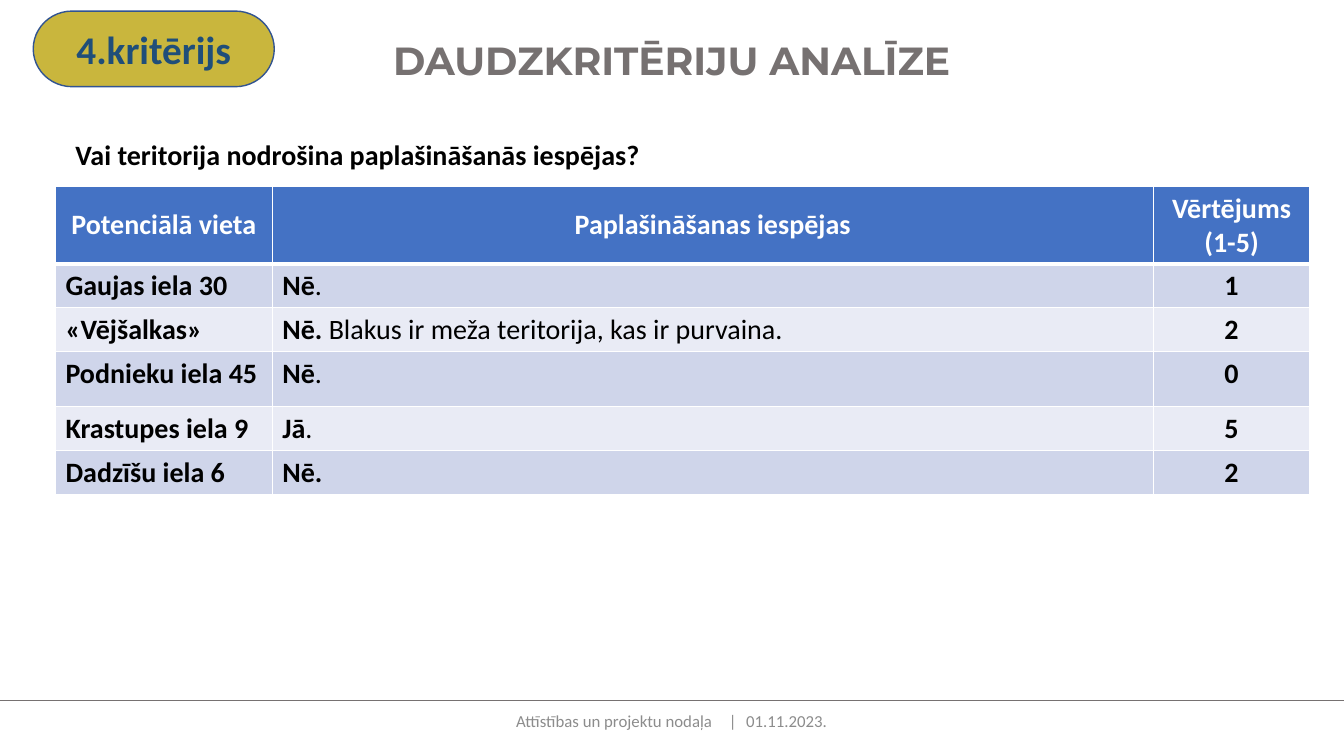
import pptx
import pptx.dml.color
import pptx.enum.shapes
import pptx.enum.text
import pptx.oxml
import pptx.oxml.ns
import pptx.util
from lxml import etree

Inches = pptx.util.Inches
Pt = pptx.util.Pt
RGBColor = pptx.dml.color.RGBColor
Align = pptx.enum.text.PP_ALIGN
Anchor = pptx.enum.text.MSO_ANCHOR
qn = pptx.oxml.ns.qn

TITLE = "DAUDZKRITĒRIJU ANALĪZE"
BADGE = "4.kritērijs"
QUESTION = "Vai teritorija nodrošina paplašināšanās iespējas?"
FOOTER = "Attīstības un projektu nodaļa\t|\t01.11.2023."
FOOTER_TABS = (2.11, 2.28)
HEADERS = ("Potenciālā vieta", "Paplašināšanas iespējas", "Vērtējums (1-5)")
# place, bold answer, plain remainder, score
SITES = [
    ("Gaujas iela 30", "Nē", ".", "1"),
    ("«Vējšalkas»", "Nē. ", "Blakus ir meža teritorija, kas ir purvaina.", "2"),
    ("Podnieku iela 45", "Nē", ".", "0"),
    ("Krastupes iela 9", "Jā", ".", "5"),
    ("Dadzīšu iela 6", "Nē.", "", "2"),
]
COLUMN_WIDTHS = (2.15, 8.74, 1.55)
ROW_HEIGHTS = (0.76, 0.43, 0.43, 0.55, 0.43, 0.43)

WHITE = RGBColor(0xFF, 0xFF, 0xFF)
BLACK = RGBColor(0, 0, 0)
GRAY = RGBColor(0x76, 0x71, 0x71)
FOOTER_GRAY = RGBColor(0x8C, 0x8C, 0x8C)
HEADER_BLUE = RGBColor(0x44, 0x72, 0xC4)
BANDS = (RGBColor(0xCF, 0xD5, 0xEA), RGBColor(0xE9, 0xEB, 0xF5))
GOLD = RGBColor(0xC9, 0xB6, 0x3D)
OUTLINE_BLUE = RGBColor(0x32, 0x54, 0x91)
NAVY = RGBColor(0x1F, 0x4E, 0x79)


def write(frame, text, plain="", size=20, font="Calibri", color=BLACK,
          bold=True, align=Align.LEFT, anchor=Anchor.TOP):
    """Fill a text frame with one paragraph: text, then an optional non-bold part."""
    frame.word_wrap = True
    frame.vertical_anchor = anchor
    para = frame.paragraphs[0]
    para.alignment = align
    for words, heavy in ((text, bold), (plain, False)):
        if words:
            span = para.add_run()
            span.text = words
            span.font.size = Pt(size)
            span.font.name = font
            span.font.bold = heavy
            span.font.color.rgb = color
    return para


def add_text_box(page, left, top, width, height):
    return page.shapes.add_textbox(
        Inches(left), Inches(top), Inches(width), Inches(height)).text_frame


def set_borders(cell, **widths):
    properties = cell._tc.get_or_add_tcPr()
    for side in "LRTB":
        width = Pt(widths.get(side, 1))
        line = etree.SubElement(properties, qn("a:ln" + side), w=str(width))
        fill = etree.SubElement(line, qn("a:solidFill"))
        etree.SubElement(fill, qn("a:srgbClr"), val=str(WHITE))


def add_footer(page):
    frame = add_text_box(page, 4.42, 6.95, 4.5, 0.4)
    frame.margin_left = Inches(0.7)
    para = write(frame, FOOTER, size=12, color=FOOTER_GRAY, bold=False,
                 anchor=Anchor.MIDDLE)
    stops = etree.SubElement(para._p.get_or_add_pPr(), qn("a:tabLst"))
    for position in FOOTER_TABS:
        etree.SubElement(stops, qn("a:tab"), pos=str(Inches(position)), algn="l")
    rule = page.shapes.add_connector(
        pptx.enum.shapes.MSO_CONNECTOR.STRAIGHT,
        0, Inches(6.95), Inches(13.33), Inches(6.95))
    rule.line.color.rgb = GRAY
    rule.line.width = Pt(0.5)
    etree.SubElement(rule._element.spPr, qn("a:effectLst"))


def add_title(page):
    title = page.shapes.title
    title.left, title.top = Inches(0.44), Inches(0.31)
    title.width, title.height = Inches(12.44), Inches(0.57)
    title.text_frame.auto_size = pptx.enum.text.MSO_AUTO_SIZE.NONE
    write(title.text_frame, TITLE, size=28, font="Montserrat", color=GRAY,
          align=Align.CENTER)


def add_question(page):
    para = write(add_text_box(page, 0.65, 1.35, 12.24, 0.45), QUESTION)
    para.line_spacing = 0.9
    para.space_before = Pt(10)


def add_score_table(page):
    table = page.shapes.add_table(
        len(ROW_HEIGHTS), len(COLUMN_WIDTHS), Inches(0.55), Inches(1.85),
        Inches(sum(COLUMN_WIDTHS)), Inches(sum(ROW_HEIGHTS))).table
    for column, width in zip(table.columns, COLUMN_WIDTHS):
        column.width = Inches(width)
    for row, height in zip(table.rows, ROW_HEIGHTS):
        row.height = Inches(height)
    for column, header in enumerate(HEADERS):
        cell = table.cell(0, column)
        set_borders(cell, B=3)
        cell.fill.solid()
        cell.fill.fore_color.rgb = HEADER_BLUE
        write(cell.text_frame, header, color=WHITE, align=Align.CENTER)
        cell.vertical_anchor = Anchor.MIDDLE
    for row, (place, answer, remainder, score) in enumerate(SITES, start=1):
        contents = ((place, "", Align.LEFT), (answer, remainder, Align.LEFT),
                    (score, "", Align.CENTER))
        for column, (text, plain, align) in enumerate(contents):
            cell = table.cell(row, column)
            set_borders(cell, T=3 if row == 1 else 1)
            cell.fill.solid()
            cell.fill.fore_color.rgb = BANDS[(row - 1) % 2]
            write(cell.text_frame, text, plain, align=align)


def add_badge(page):
    badge = page.shapes.add_shape(
        pptx.enum.shapes.MSO_SHAPE.FLOWCHART_TERMINATOR,
        Inches(0.33), Inches(0.11), Inches(2.39), Inches(0.75))
    badge.shadow.inherit = False
    badge.fill.solid()
    badge.fill.fore_color.rgb = GOLD
    badge.line.color.rgb = OUTLINE_BLUE
    badge.line.width = Pt(1)
    write(badge.text_frame, BADGE, size=28, color=NAVY, align=Align.CENTER,
          anchor=Anchor.MIDDLE)


def main():
    deck = pptx.Presentation()
    deck.slide_width, deck.slide_height = Inches(13.33), Inches(7.5)
    page = deck.slides.add_slide(deck.slide_layouts[5])
    add_footer(page)
    add_title(page)
    add_question(page)
    add_score_table(page)
    add_badge(page)
    deck.save("out.pptx")


if __name__ == "__main__":
    main()
